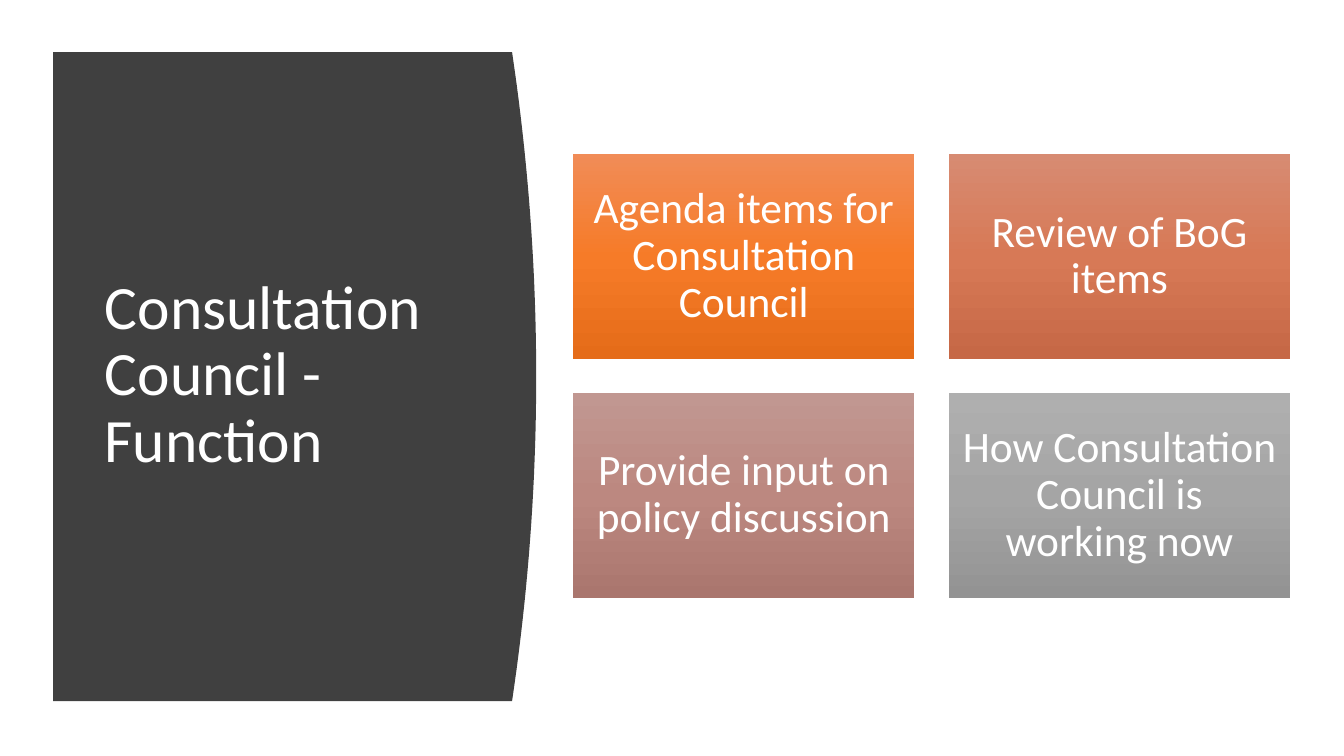
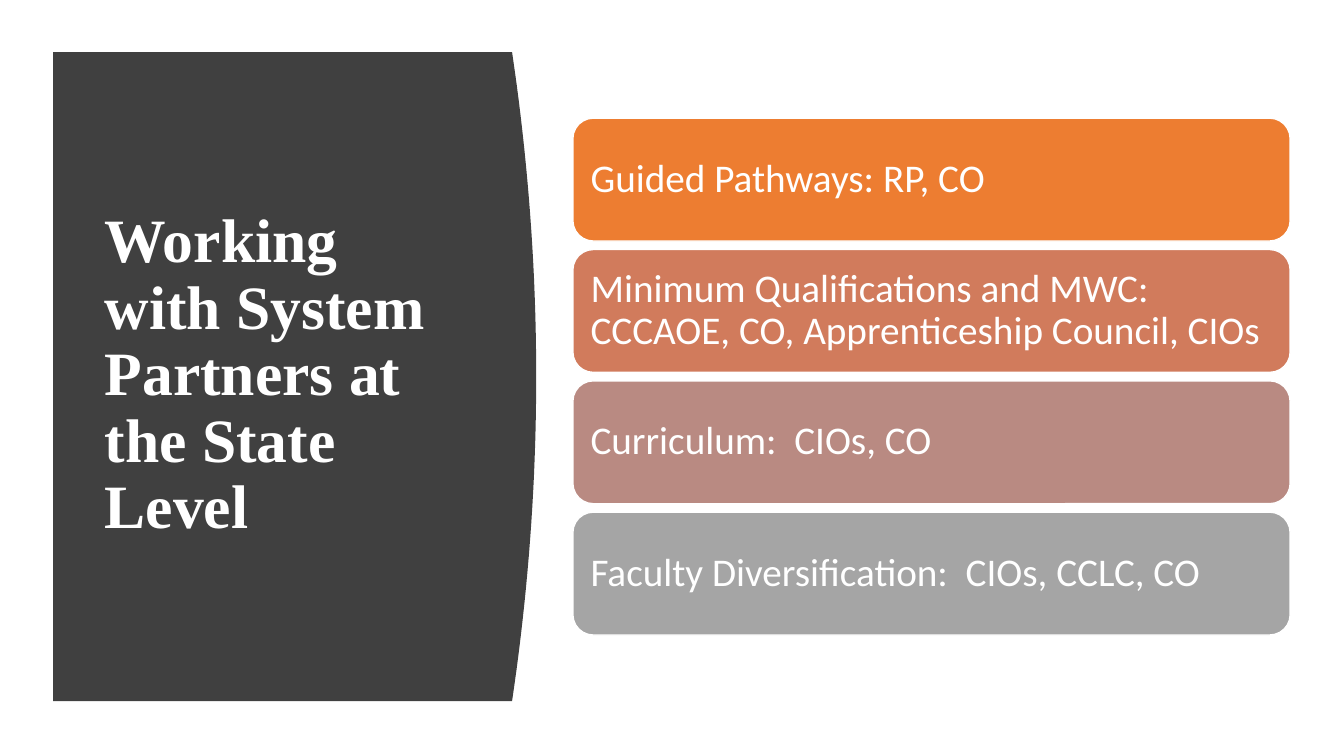
from pptx import Presentation
from pptx.dml.color import RGBColor
from pptx.enum.shapes import MSO_SHAPE
from pptx.enum.text import MSO_ANCHOR, MSO_AUTO_SIZE, PP_ALIGN
from pptx.oxml.ns import qn
from pptx.util import Pt
from copy import deepcopy

RECT = MSO_SHAPE.RECTANGLE
ROUND = MSO_SHAPE.ROUNDED_RECTANGLE
MIDDLE = MSO_ANCHOR.MIDDLE
LEFT = PP_ALIGN.LEFT
CENTER = PP_ALIGN.CENTER
FIXED = MSO_AUTO_SIZE.NONE

COLORS = {"white": "FFFFFF", "panel": "404040", "orange": "ED7D31",
          "rust": "D17B5C", "rose": "B98A82", "gray": "A5A5A5"}
FADES = {"orange": ("F18C57", "F67B28", "E56C19"),
         "rust": ("D78B72", "D77956", "C66846"),
         "rose": ("C19791", "BC8880", "AA766E"),
         "gray": ("AFAFAF", "A5A5A5", "939393")}
HUES = ("orange", "rust", "rose", "gray")
SANS = "Calibri"
SERIF = "Times New Roman"

PANEL = (38, 37.2, 345, 463.6)
CARDS = (409.2, 110, 512.4, 317)
BARS = (409.2, 84.4, 512.4, 369.2)


def rgb(name):
    """Return the named colour."""
    return RGBColor.from_string(COLORS[name])


def write(frame, text, size, font=SANS, bold=False, align=LEFT, inset=None):
    """Write one white run, centred in height, into a text frame."""
    frame.word_wrap = True
    frame.auto_size = FIXED
    frame.vertical_anchor = MIDDLE
    if inset is not None:
        frame.margin_left = frame.margin_right = Pt(inset)
        frame.margin_top = frame.margin_bottom = Pt(inset)
    para = frame.paragraphs[0]
    para.alignment = align
    para.line_spacing = 0.9
    run = para.add_run()
    run.text = text
    run.font.size = Pt(size)
    run.font.name = font
    run.font.bold = bold
    run.font.color.rgb = rgb("white")


def fade(shape, stops):
    """Fill a shape with a three-stop gradient from top to bottom."""
    shape.fill.gradient()
    shape.fill.gradient_angle = 270
    first = shape._element.spPr.find(".//" + qn("a:gs"))
    first.addnext(deepcopy(first))
    for stop, place, tone in zip(shape.fill.gradient_stops, (0, 0.5, 1), stops):
        stop.position = place
        stop.color.rgb = RGBColor.from_string(tone)


def grid(box, cols, rows, gap):
    """Yield equal cells of a box, row by row."""
    left, top, width, height = box
    wide = (width - gap * (cols - 1)) / cols
    high = (height - gap * (rows - 1)) / rows
    for row in range(rows):
        for col in range(cols):
            yield left + col * (wide + gap), top + row * (high + gap), wide, high


def tile(slide, kind, cell):
    """Add a shape without shadow to a cell."""
    shape = slide.shapes.add_shape(kind, *map(Pt, cell))
    shape.shadow.inherit = False
    return shape


def panel(slide, box, text, font, bold):
    """Draw the bowed dark panel and place the title on it."""
    left, top, width, height = box
    bulge = width * 0.05
    steps = 40
    edge = []
    for step in range(steps + 1):
        part = step / steps
        bow = 4 * part * (1 - part)
        edge.append((Pt(left + width - bulge * (1 - bow)), Pt(top + height * part)))
    form = slide.shapes.build_freeform(Pt(left), Pt(top))
    form.add_line_segments(edge + [(Pt(left), Pt(top + height))], close=True)
    shape = form.convert_to_shape()
    shape.shadow.inherit = False
    shape.fill.solid()
    shape.fill.fore_color.rgb = rgb("panel")
    shape.line.fill.background()

    title = slide.shapes.title
    title.left, title.top = Pt(left + 29.6), Pt(top + 42.8)
    title.width, title.height = Pt(width - 75.6), Pt(height - 86.6)
    slide.shapes._spTree.append(title._element)
    write(title.text_frame, text, 44, font, bold)


def cards(slide, box, texts):
    """Fill a box with two rows of gradient cards."""
    for cell, text, hue in zip(grid(box, 2, 2, 24.4), texts, HUES):
        card = tile(slide, RECT, cell)
        fade(card, FADES[hue])
        card.line.fill.background()
        write(card.text_frame, text, 31, align=CENTER, inset=9.3)


def bars(slide, box, texts):
    """Fill a box with a stack of rounded bars."""
    for cell, text, hue in zip(grid(box, 1, len(texts), 6), texts, HUES):
        bar = tile(slide, ROUND, cell)
        bar.fill.solid()
        bar.fill.fore_color.rgb = rgb(hue)
        bar.line.color.rgb = rgb("white")
        bar.line.width = Pt(1)
        write(bar.text_frame, text, 28, inset=8.4)


def page(deck, title, font=SANS, bold=False):
    """Add a slide with its title panel."""
    slide = deck.slides.add_slide(deck.slide_layouts[5])
    panel(slide, PANEL, title, font, bold)
    return slide


def main():
    """Build and save the deck."""
    deck = Presentation()
    deck.slide_width, deck.slide_height = Pt(960), Pt(540)
    cards(page(deck, "Consultation Council - Function"), CARDS, (
        "Agenda items for Consultation Council",
        "Review of BoG items",
        "Provide input on policy discussion",
        "How Consultation Council is working now"))
    bars(page(deck, "Working with System Partners at the State Level", SERIF, True), BARS, (
        "Guided Pathways: RP, CO",
        "Minimum Qualifications and MWC:  CCCAOE, CO, Apprenticeship Council, CIOs",
        "Curriculum:  CIOs, CO",
        "Faculty Diversification:  CIOs, CCLC, CO"))
    deck.save("out.pptx")


if __name__ == "__main__":
    main()
